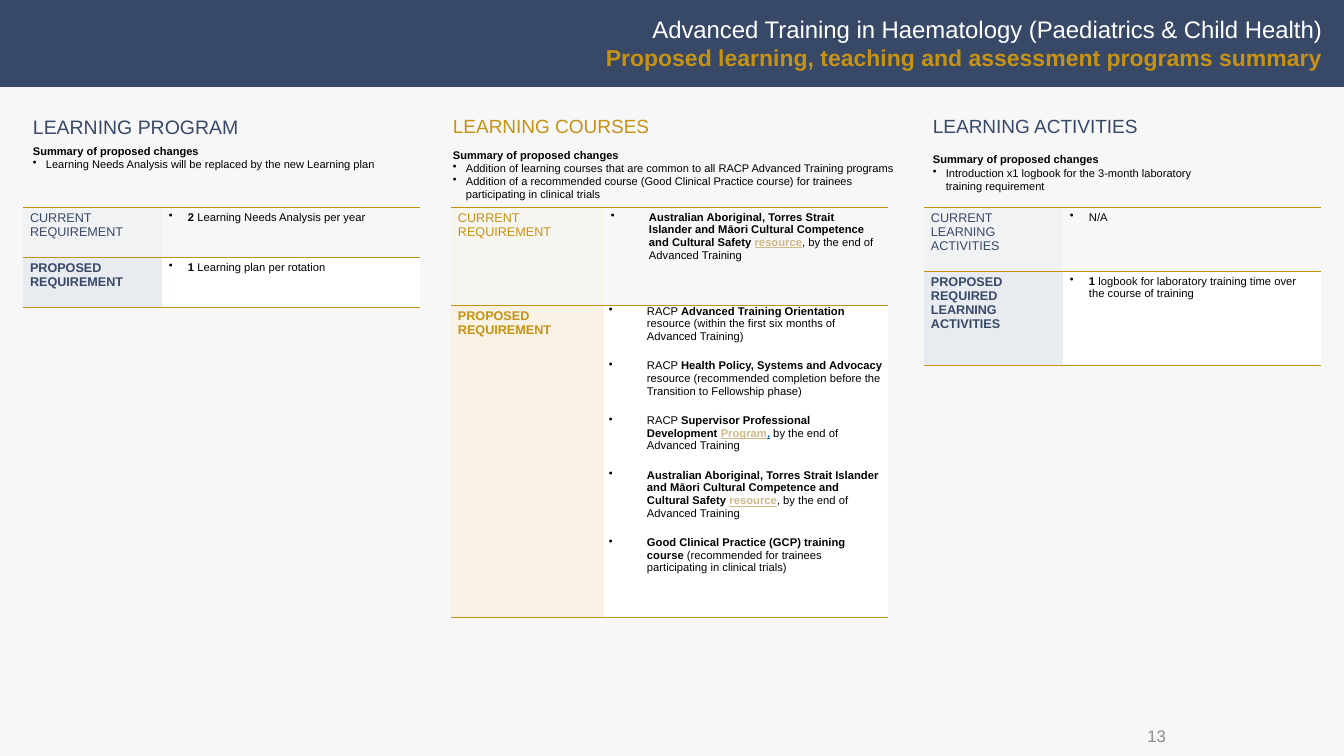
from lxml import etree
from pptx import Presentation
from pptx.dml.color import RGBColor
from pptx.enum.shapes import MSO_SHAPE
from pptx.enum.text import MSO_ANCHOR, MSO_AUTO_SIZE, PP_ALIGN
from pptx.oxml.ns import qn
from pptx.util import Emu, Pt

RECTANGLE = MSO_SHAPE.RECTANGLE
MIDDLE = MSO_ANCHOR.MIDDLE
FIT_SHAPE = MSO_AUTO_SIZE.SHAPE_TO_FIT_TEXT
LEFT, RIGHT = PP_ALIGN.LEFT, PP_ALIGN.RIGHT

NAVY = RGBColor(0x38, 0x49, 0x67)
GOLD = RGBColor(0xC6, 0x92, 0x14)
BLUE_TINT = RGBColor(0xD2, 0xD9, 0xE6)
GOLD_TINT = RGBColor(0xFA, 0xEC, 0xCA)
SAND = RGBColor(0xCE, 0xB8, 0x88)
LINK_BLUE = RGBColor(0x05, 0x63, 0xC1)
GREY = RGBColor(0x8C, 0x8C, 0x8C)
PALE = RGBColor(0xF7, 0xF7, 0xF7)
WHITE = RGBColor(0xFF, 0xFF, 0xFF)
BLACK = RGBColor(0, 0, 0)

PLAIN_TABLE = "{2D5ABB26-0587-4C30-8999-92F81FD0307C}"
CELL_INSETS = (7, 4)


def px(length):
    return Emu(round(length * 914400 / 100.8))


def span(text, size=8, color=BLACK, bold=False, underline=False):
    return text, size, color, bold, underline


def bold(text):
    return span(text, bold=True)


def linked(text, color=SAND):
    return span(text, color=color, bold=True, underline=True)


class SlideBuilder:
    font = "Arial"

    def __init__(self, deck):
        self.slide = deck.slides.add_slide(deck.slide_layouts[6])
        self.slide.background.fill.solid()
        self.slide.background.fill.fore_color.rgb = PALE

    def fill_para(self, para, spans, align=LEFT, indent=0):
        if indent:
            properties = para._p.get_or_add_pPr()
            properties.set("marL", str(px(indent)))
            properties.set("indent", str(-px(indent)))
            etree.SubElement(properties, qn("a:buChar")).set("char", "•")
        para.alignment = align
        for text, size, color, is_bold, underline in spans:
            if text == "\n":
                para.add_line_break()
                continue
            run = para.add_run()
            run.text = text
            font = run.font
            font.name, font.size = self.font, Pt(size)
            font.bold, font.underline = is_bold, underline
            font.color.rgb = color

    def text(self, place, paragraphs, align=LEFT, indent=0, grow=True):
        box = self.slide.shapes.add_textbox(*map(px, place))
        frame = box.text_frame
        frame.word_wrap = True
        if grow:
            frame.auto_size = FIT_SHAPE
        else:
            frame.vertical_anchor = MIDDLE
        for index, spans in enumerate(paragraphs):
            para = frame.add_paragraph() if index else frame.paragraphs[0]
            self.fill_para(para, spans, align, indent if index else 0)

    def band(self, place, color):
        shape = self.slide.shapes.add_shape(RECTANGLE, *map(px, place))
        shape.shadow.inherit = False
        shape.fill.solid()
        shape.fill.fore_color.rgb = color
        shape.line.fill.background()

    def cell(self, cell, paragraphs, insets, fill=None, opacity=100, indent=0, edges=("lnT",)):
        cell.margin_left = cell.margin_right = px(insets[0])
        cell.margin_top = cell.margin_bottom = px(insets[1])
        for index, spans in enumerate(paragraphs):
            frame = cell.text_frame
            para = frame.add_paragraph() if index else frame.paragraphs[0]
            self.fill_para(para, spans, indent=indent)
            if indent:
                para.space_after = Pt(6)
                if index:
                    para.space_before = Pt(6)
        properties = cell._tc.get_or_add_tcPr()
        if fill is None:
            cell.fill.background()
        else:
            cell.fill.solid()
            cell.fill.fore_color.rgb = fill
            color = properties.find(".//" + qn("a:srgbClr"))
            etree.SubElement(color, qn("a:alpha")).set("val", str(opacity * 1000))
        for position, edge in enumerate(edges):
            line = etree.Element(qn("a:" + edge), w=str(Pt(0.25)))
            solid = etree.SubElement(line, qn("a:solidFill"))
            etree.SubElement(solid, qn("a:srgbClr")).set("val", str(GOLD))
            properties.insert(position, line)

    def table(self, left, widths, heights, rows, color, tint, indent, last_insets):
        frame = self.slide.shapes.add_table(
            2, 2, px(left), px(207), px(sum(widths)), px(sum(heights)))
        table = frame.table
        table.first_row = table.horz_banding = False
        table._tbl.tblPr.find(qn("a:tableStyleId")).text = PLAIN_TABLE
        for column, width in zip(table.columns, widths):
            column.width = px(width)
        for index, (label, items) in enumerate(rows):
            proposed = index == 1
            table.rows[index].height = px(heights[index])
            edges = ("lnT", "lnB") if proposed else ("lnT",)
            heading = span(label, size=9, color=color, bold=proposed)
            self.cell(table.cell(index, 0), [[heading]], CELL_INSETS, tint,
                      40 if proposed else 15, edges=edges)
            self.cell(table.cell(index, 1), items, last_insets if proposed else CELL_INSETS,
                      WHITE if proposed else None, indent=indent, edges=edges)

    def panel(self, title, title_place, title_size, summary_place, changes, color, **table):
        self.text(title_place, [[span(title, size=title_size, color=color)]])
        heading = [span("Summary of proposed changes", size=7.9, bold=True)]
        self.text(summary_place, [heading] + [[span(change, size=7.9)] for change in changes],
                  indent=13)
        self.table(color=color, **table)


def main():
    deck = Presentation()
    deck.slide_width, deck.slide_height = px(1344), px(756)
    page = SlideBuilder(deck)

    cultural_safety = [
        bold("Australian Aboriginal, Torres Strait Islander and Māori "
             "Cultural Competence and Cultural Safety "),
        linked("resource"), span(", by the end of Advanced Training")]
    courses = [
        [span("RACP "), bold("Advanced Training Orientation "),
         span("resource (within the first six months of Advanced Training)")],
        [span("RACP "), bold("Health Policy, Systems and Advocacy"),
         span(" resource (recommended completion before the Transition to Fellowship phase)")],
        [span("RACP "), bold("Supervisor Professional Development "), linked("Program"),
         linked(",", LINK_BLUE), span(" by the end of Advanced Training")],
        cultural_safety,
        [bold("Good Clinical Practice (GCP) training course"),
         span(" (recommended for trainees participating in clinical trials)")]]

    page.panel(
        "LEARNING PROGRAM", (23, 110, 308, 34), 13.9, (23, 139, 397, 37),
        ["Learning Needs Analysis will be replaced by the new Learning plan"], NAVY,
        left=23, widths=(139, 258), heights=(50, 50), tint=BLUE_TINT, indent=19,
        last_insets=CELL_INSETS,
        rows=[("CURRENT REQUIREMENT", [[bold("2 "), span("Learning Needs Analysis per year")]]),
              ("PROPOSED REQUIREMENT", [[bold("1"), span(" Learning plan per rotation")]])])
    page.panel(
        "LEARNING COURSES", (443, 110, 259, 33), 13.6, (443, 143, 469, 64),
        ["Addition of learning courses that are common to all RACP Advanced Training programs",
         "Addition of a recommended course (Good Clinical Practice course) for trainees "
         "participating in clinical trials"], GOLD,
        left=451, widths=(153, 284), heights=(98, 312), tint=GOLD_TINT, indent=38,
        last_insets=(5, 0),
        rows=[("CURRENT REQUIREMENT", [cultural_safety]), ("PROPOSED REQUIREMENT", courses)])
    page.panel(
        "LEARNING ACTIVITIES", (923, 110, 289, 33), 13.6, (923, 148, 286, 50),
        ["Introduction x1 logbook for the 3-month laboratory training requirement"], NAVY,
        left=924, widths=(139, 258), heights=(64, 94), tint=BLUE_TINT, indent=19,
        last_insets=CELL_INSETS,
        rows=[("CURRENT LEARNING ACTIVITIES", [[span("N/A")]]),
              ("PROPOSED REQUIRED LEARNING ACTIVITIES",
               [[bold("1"), span(" logbook for laboratory training time over "
                                 "the course of training")]])])

    page.text((950, 716, 226, 40), [[span("13", size=12, color=GREY)]], RIGHT, grow=False)
    page.band((0, 0, 1344, 87), NAVY)
    page.text((541, 10, 791, 68), [[
        span("Advanced Training in Haematology (Paediatrics & Child Health)",
             size=17.1, color=WHITE),
        span("\n"),
        span("Proposed learning, teaching and assessment programs summary",
             size=16.4, color=GOLD, bold=True)]], RIGHT)
    deck.save("out.pptx")


if __name__ == "__main__":
    main()
